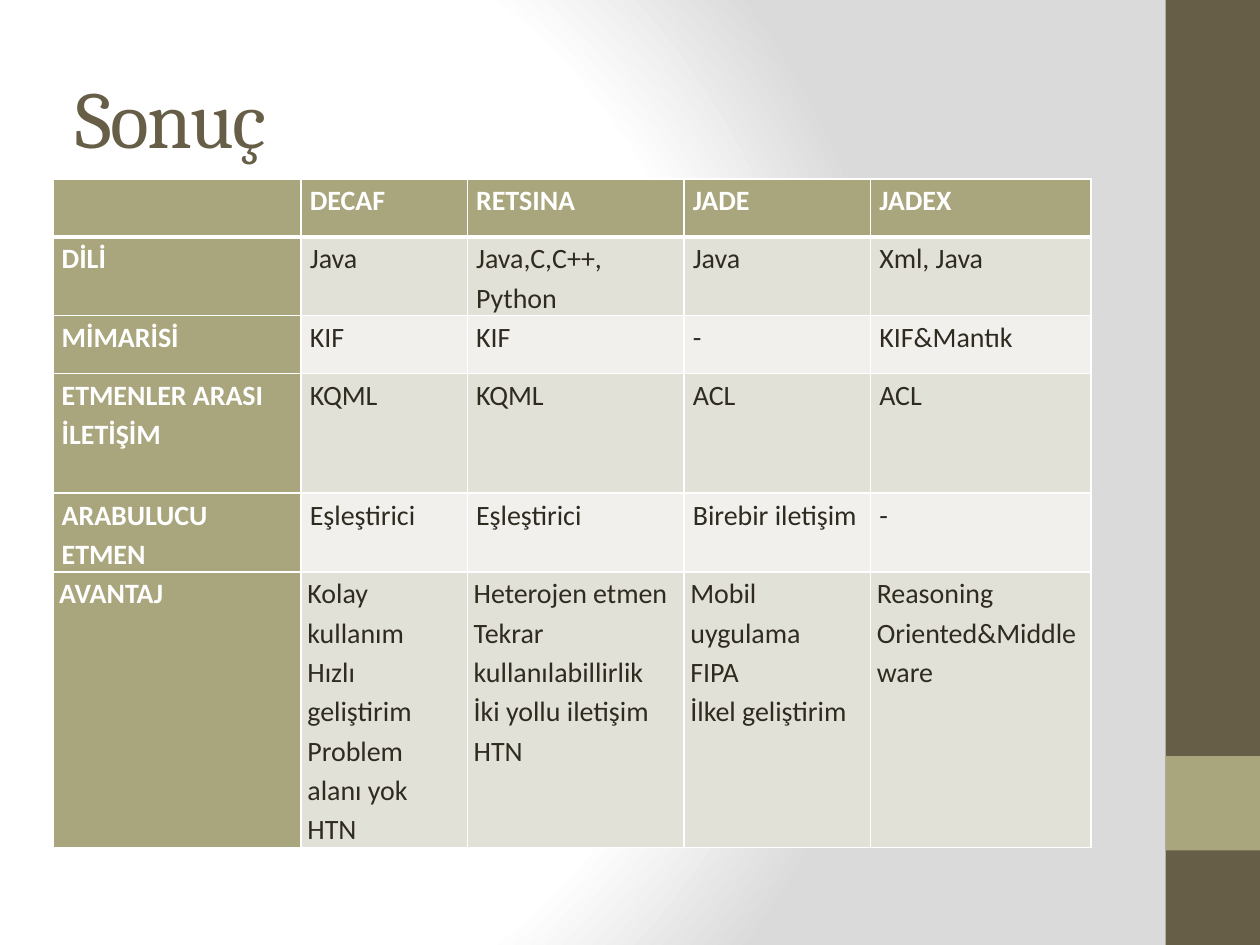
from pptx import Presentation
from pptx.dml.color import RGBColor
from pptx.enum.shapes import MSO_SHAPE as Shape
from pptx.enum.text import MSO_ANCHOR as Anchor, PP_ALIGN as Align
from pptx.oxml import parse_xml
from pptx.oxml.ns import nsdecls
from pptx.util import Inches, Pt

# Content: a tuple in a cell holds its paragraphs
TITLE = "Sonuç"
ROWS = [
    ["", "DECAF", "RETSINA", "JADE", "JADEX"],
    ["DİLİ", "Java", ("Java,C,C++,", "Python"), "Java", "Xml, Java"],
    ["MİMARİSİ", "KIF", "KIF", "-", "KIF&Mantık"],
    ["ETMENLER ARASI İLETİŞİM", "KQML", "KQML", "ACL", "ACL"],
    ["ARABULUCU ETMEN", "Eşleştirici", "Eşleştirici", "Birebir iletişim", "-"],
    ["AVANTAJ",
     ("Kolay kullanım", "Hızlı geliştirim", "Problem alanı yok", "HTN"),
     ("Heterojen etmen", "Tekrar kullanılabillirlik", "İki yollu iletişim", "HTN"),
     ("Mobil uygulama", "FIPA", "İlkel geliştirim"),
     "Reasoning Oriented&Middleware"],
]
COLUMN_WIDTHS = [1.97, 1.32, 1.72, 1.48, 1.75]
ROW_HEIGHTS = [0.46, 0.46, 0.46, 0.95, 0.46, 1.93]

BROWN, OLIVE, WHITE, INK = "675E47", "A9A57C", "FFFFFF", "2F2B20"
BANDS = ["F1F0EC", "E2E1D7"]
SIDEBAR = [(0, 7.5, BROWN), (6, 0.75, OLIVE)]  # top, height, colour
GRADIENT = [(0, WHITE), (75, WHITE), (100, "DADADA")]


def paint(color_format, color):
    color_format.rgb = RGBColor.from_string(color)


def fill_with(item, color):
    item.fill.solid()
    paint(item.fill.fore_color, color)


def set_format(item, values):
    for name, value in values.items():
        setattr(item, name, value)


def add_span(para, text, size, font, color, bold=False):
    span = para.add_run()
    span.text = text
    set_format(span.font, {"size": Pt(size), "name": font, "bold": bold})
    paint(span.font.color, color)
    return span


def set_background(page):
    stops = "".join(f'<a:gs pos="{at * 1000}"><a:srgbClr val="{color}"/></a:gs>'
                    for at, color in GRADIENT)
    page.element.cSld.insert(0, parse_xml(
        f'<p:bg {nsdecls("p", "a")}><p:bgPr><a:gradFill rotWithShape="1">'
        f'<a:gsLst>{stops}</a:gsLst><a:path path="circle">'
        '<a:fillToRect l="20000" t="50000" r="100000" b="50000"/></a:path>'
        '</a:gradFill><a:effectLst/></p:bgPr></p:bg>'))


def set_borders(cell, widths):
    properties = cell._tc.get_or_add_tcPr()
    for side, width in widths.items():
        properties.append(parse_xml(
            f'<a:ln{side} {nsdecls("a")} w="{Pt(width)}"><a:solidFill>'
            f'<a:srgbClr val="{WHITE}"/></a:solidFill></a:ln{side}>'))


def format_cell(cell, content, row, column):
    heading = row == 0 or column == 0
    inset = Inches(0.05 if row == len(ROWS) - 1 else 0.07)
    set_format(cell, {"margin_left": inset, "margin_right": inset,
                      "margin_top": 0, "margin_bottom": 0})
    set_borders(cell, {"L": 1, "R": 1, "T": 3 if row == 1 else 1,
                       "B": 3 if row == 0 else 1})
    fill_with(cell, OLIVE if heading else BANDS[row % 2])
    lines = content if isinstance(content, tuple) else (content,)
    for index, line in enumerate(lines):
        frame = cell.text_frame
        para = frame.add_paragraph() if index else frame.paragraphs[0]
        para.line_spacing = 1.15
        if line:
            add_span(para, line, 16, "Calibri", WHITE if heading else INK, heading)


def main():
    deck = Presentation()
    set_format(deck, {"slide_width": Inches(10), "slide_height": Inches(7.5)})
    page = deck.slides.add_slide(deck.slide_layouts[5])
    set_background(page)

    # Sidebar
    for top, height, color in SIDEBAR:
        bar = page.shapes.add_shape(Shape.RECTANGLE, Inches(9.25), Inches(top),
                                    Inches(0.75), Inches(height))
        bar.shadow.inherit = False
        bar.line.fill.background()
        fill_with(bar, color)

    # Title
    title = page.shapes.title
    set_format(title, {"left": Inches(0.5), "top": Inches(0.3),
                       "width": Inches(8.33), "height": Inches(1.25)})
    title.text_frame.vertical_anchor = Anchor.MIDDLE
    para = title.text_frame.paragraphs[0]
    para.alignment = Align.LEFT
    span = add_span(para, TITLE, 46, "Cambria", BROWN)
    span.font._element.set("spc", "-100")

    # Comparison table
    table = page.shapes.add_table(
        len(ROWS), len(COLUMN_WIDTHS), Inches(0.42), Inches(1.42),
        Inches(sum(COLUMN_WIDTHS)), Inches(sum(ROW_HEIGHTS))).table
    for column, width in zip(table.columns, COLUMN_WIDTHS):
        column.width = Inches(width)
    for row, height in zip(table.rows, ROW_HEIGHTS):
        row.height = Inches(height)
    for r, contents in enumerate(ROWS):
        for c, content in enumerate(contents):
            format_cell(table.cell(r, c), content, r, c)

    deck.save("out.pptx")


if __name__ == "__main__":
    main()
